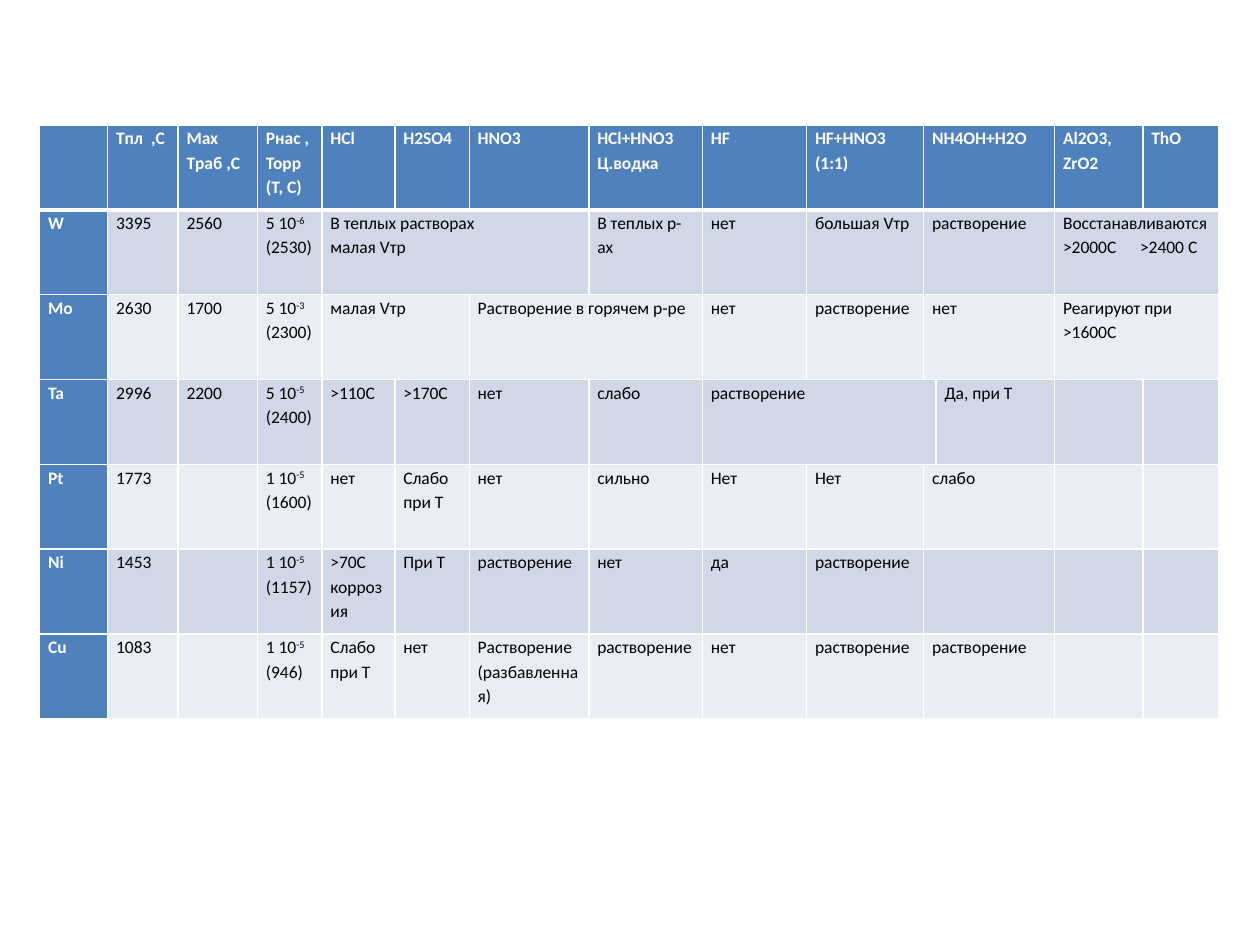
from lxml import etree
from pptx import Presentation
from pptx import util as u
from pptx.dml.color import RGBColor
from pptx.oxml import ns

COLORS = {
    "head": "4F81BD",
    "odd": "D0D8E8",
    "even": "E9EDF4",
    "white": "FFFFFF",
    "black": "000000",
}
FONT = "Calibri"
COL_WIDTHS = [1.37, 1.42, 1.6, 1.3, 1.47, 1.5, 2.41,
              2.29, 2.1, 2.36, 0.25, 2.39, 1.78, 1.52]
ROW_HEIGHT = 1.71

# None continues the cell to its left; "^" starts a superscript
ROWS = [
    ["", "Tпл  ,C", "Max Tраб ,C", "Pнас ,\nТорр (Т, С)", "HCl", "H2SO4", "HNO3",
     "HCl+HNO3\nЦ.водка", "HF", "HF+HNO3\n(1:1)", "NH4OH+H2O", None,
     "Al2O3,\nZrO2", "ThO"],
    ["W", "3395", "2560", "5 10^-6\n(2530)", "В теплых растворах\nмалая Vтр", None, None,
     "В теплых р-ах", "нет", "большая Vтр", "растворение", None,
     "Восстанавливаются\n>2000С      >2400 С", None],
    ["Mo", "2630", "1700", "5 10^-3\n(2300)", "малая Vтр", None,
     "Растворение в горячем р-ре", None, "нет", "растворение", "нет", None,
     "Реагируют при\n>1600С", None],
    ["Ta", "2996", "2200", "5 10^-5\n(2400)", ">110С", ">170С", "нет",
     "слабо", "растворение", None, None, "Да, при Т", "", ""],
    ["Pt", "1773", "", "1 10^-5\n(1600)", "нет", "Слабо при Т", "нет",
     "сильно", "Нет", "Нет", "слабо", None, "", ""],
    ["Ni", "1453", "", "1 10^-5\n(1157)", ">70С коррозия", "При Т", "растворение",
     "нет", "да", "растворение", "", None, "", ""],
    ["Cu", "1083", "", "1 10^-5\n(946)", "Слабо при Т", "нет",
     "Растворение\n(разбавленная)", "растворение", "нет", "растворение",
     "растворение", None, "", ""],
]


def rgb(name):
    return RGBColor.from_string(COLORS[name])


def write_text(tf, content, size=10, color="black", bold=False, spacing=1.15):
    """Write one paragraph per line, with an optional superscript at its end."""
    tf.word_wrap = True
    for i, line in enumerate(content.split("\n")):
        p = tf.paragraphs[0] if i == 0 else tf.add_paragraph()
        p.line_spacing = spacing
        for j, part in enumerate(line.split("^")):
            if not part:
                continue
            r = p.add_run()
            r.text = part
            r.font.name = FONT
            r.font.size = u.Pt(size)
            r.font.bold = bold
            r.font.color.rgb = rgb(color)
            if j:
                r._r.get_or_add_rPr().set("baseline", "30000")


def set_borders(cell, color="white", **widths):
    """Draw the cell's edges; widths are in points, keyed by L, R, T, B."""
    tc_pr = cell._tc.get_or_add_tcPr()
    for i, side in enumerate("LRTB"):
        ln = etree.Element(ns.qn(f"a:ln{side}"), w=str(u.Pt(widths.get(side, 1))))
        fill = etree.SubElement(ln, ns.qn("a:solidFill"))
        etree.SubElement(fill, ns.qn("a:srgbClr"), val=COLORS[color])
        tc_pr.insert(i, ln)


def format_cell(cell, row, col):
    if row == 0 or col == 0:
        fill = "head"
    else:
        fill = "odd" if row % 2 else "even"
    cell.fill.solid()
    cell.fill.fore_color.rgb = rgb(fill)
    cell.margin_left = cell.margin_right = u.Cm(0.17)
    cell.margin_top = cell.margin_bottom = 0
    # The rule below the header is thicker
    set_borders(cell, T=3 if row == 1 else 1, B=3 if row == 0 else 1)


def add_metals_table(s):
    table = s.shapes.add_table(
        len(ROWS), len(COL_WIDTHS), u.Cm(0.8), u.Cm(2.52),
        u.Cm(sum(COL_WIDTHS)), u.Cm(ROW_HEIGHT * len(ROWS))).table
    table.horz_banding = False
    for column, width in zip(table.columns, COL_WIDTHS):
        column.width = u.Cm(width)

    for i, values in enumerate(ROWS):
        table.rows[i].height = u.Cm(ROW_HEIGHT)
        for j, value in enumerate(values):
            cell = table.cell(i, j)
            format_cell(cell, i, j)
            if value is None:
                continue
            heading = i == 0 or j == 0
            write_text(cell.text_frame, value, bold=heading,
                       color="white" if heading else "black")
            # Merge with the continuation cells on the right
            end = j
            while end + 1 < len(values) and values[end + 1] is None:
                end += 1
            if end > j:
                cell.merge(table.cell(i, end))


def main():
    prs = Presentation()
    prs.slide_width, prs.slide_height = u.Cm(25.4), u.Cm(19.05)
    s = prs.slides.add_slide(prs.slide_layouts[6])
    add_metals_table(s)
    prs.save("out.pptx")


if __name__ == "__main__":
    main()
